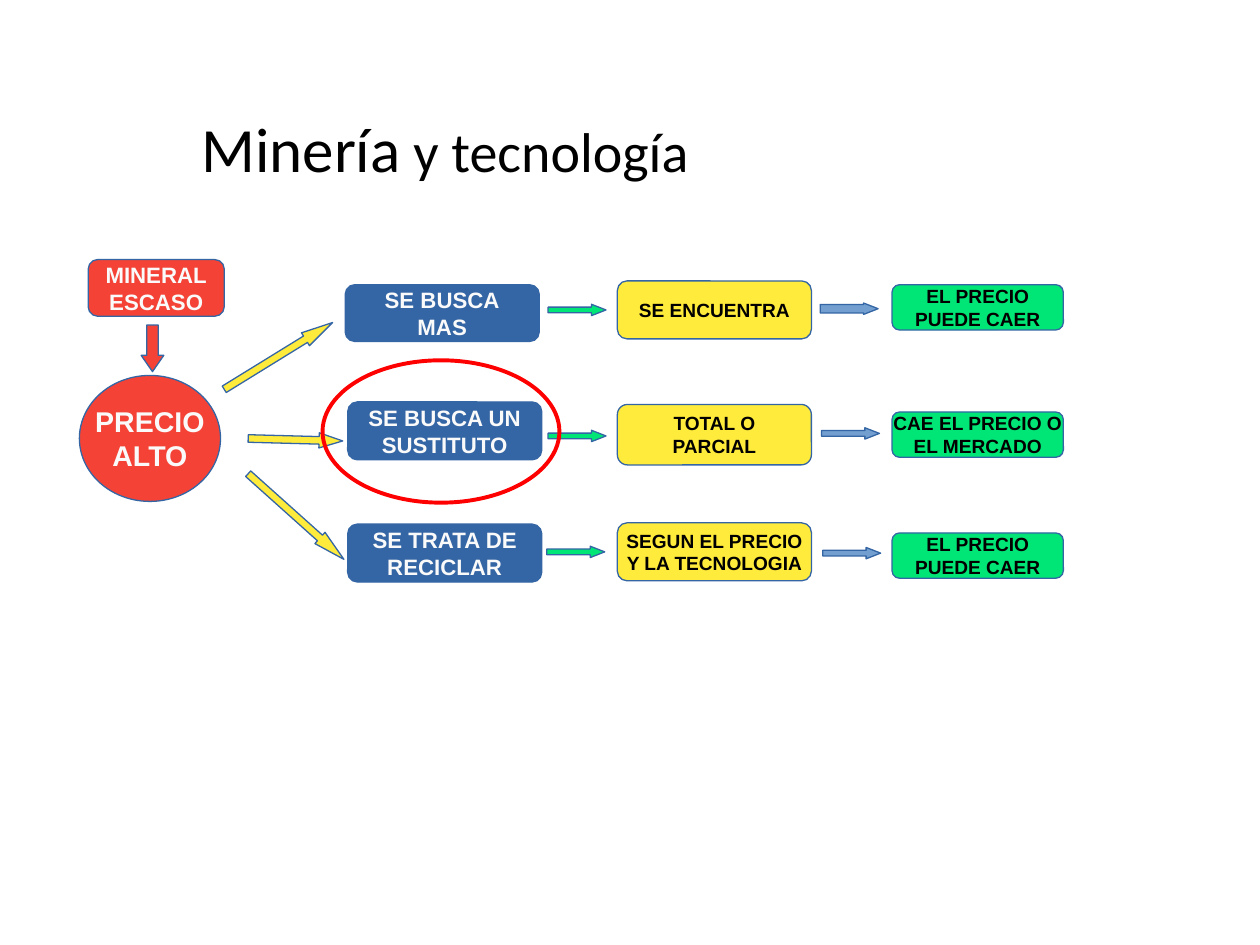
import math

from pptx import Presentation
from pptx import util as u
from pptx.dml.color import RGBColor
from pptx.enum import shapes, text

RED = RGBColor(0xF4, 0x43, 0x36)
BLUE = RGBColor(0x34, 0x65, 0xA4)
LIGHT_BLUE = RGBColor(0x72, 0x9F, 0xCF)
YELLOW = RGBColor(0xFF, 0xEB, 0x3B)
GREEN = RGBColor(0x00, 0xE6, 0x76)
HIGHLIGHT = RGBColor(0xFF, 0x00, 0x00)
WHITE = RGBColor(0xFA, 0xFA, 0xFA)
BLACK = RGBColor(0x00, 0x00, 0x00)
ROUNDED = shapes.MSO_SHAPE.ROUNDED_RECTANGLE
OVAL = shapes.MSO_SHAPE.OVAL


class FlowSlide:
    """Holds the slide and the style of its flow diagram."""

    label_font, title_font = "Arial", "Calibri"
    outline, outline_width = BLUE, u.Pt(0)

    def __init__(self, prs):
        self.slide = prs.slides.add_slide(prs.slide_layouts[6])

    def _shape(self, kind, left, top, width, height, fill):
        shape = self.slide.shapes.add_shape(
            kind, *(u.Inches(n) for n in (left, top, width, height)))
        shape.shadow.inherit = False
        shape.fill.solid()
        shape.fill.fore_color.rgb = fill
        shape.line.color.rgb = self.outline
        shape.line.width = self.outline_width
        return shape

    def box(self, lines, left, top, width, height, fill, color, size, kind=ROUNDED):
        frame = self._shape(kind, left, top, width, height, fill).text_frame
        frame.word_wrap = False
        frame.vertical_anchor = text.MSO_ANCHOR.MIDDLE
        frame.margin_left = frame.margin_right = u.Inches(0.09)
        frame.margin_top = frame.margin_bottom = u.Inches(0.04)
        frame.text = "\n".join(lines)
        for line in frame.paragraphs:
            line.alignment = text.PP_ALIGN.CENTER
            line.font.name = self.label_font
            line.font.size = u.Pt(size)
            line.font.bold = True
            line.font.color.rgb = color

    def arrow(self, start, end, fill, thickness=0.09, shaft=0.5, head=0.25):
        """Block arrow; shaft is a share of its thickness, head of its length."""
        (x1, y1), (x2, y2) = start, end
        length = math.dist(start, end)
        arrow = self._shape(
            shapes.MSO_SHAPE.RIGHT_ARROW, (x1 + x2 - length) / 2,
            (y1 + y2 - thickness) / 2, length, thickness, fill)
        arrow.rotation = math.degrees(math.atan2(y2 - y1, x2 - x1))
        arrow.adjustments[0] = shaft
        arrow.adjustments[1] = head * length / thickness

    def ring(self, left, top, width, height):
        ring = self._shape(OVAL, left, top, width, height, HIGHLIGHT)
        ring.fill.background()
        ring.line.color.rgb = HIGHLIGHT
        ring.line.width = u.Pt(2.25)

    def title(self, parts, left, top, width, height):
        frame = self.slide.shapes.add_textbox(
            *(u.Inches(n) for n in (left, top, width, height))).text_frame
        frame.word_wrap = True
        frame.auto_size = text.MSO_AUTO_SIZE.SHAPE_TO_FIT_TEXT
        heading = frame.paragraphs[0]
        heading.font.name = self.title_font
        heading.font.color.rgb = BLACK
        for words, size in parts:
            run = heading.add_run()
            run.text = words
            run.font.size = u.Pt(size)


# Each stage: lines, left, top, height
RESPONSES = [
    (["SE BUSCA", "MAS"], 2.74, 2.26, 0.45),
    (["SE BUSCA UN", "SUSTITUTO"], 2.76, 3.19, 0.46),
    (["SE TRATA DE", "RECICLAR"], 2.76, 4.16, 0.46),
]
OUTCOMES = [
    (["SE ENCUENTRA"], 4.9, 2.23, 0.46),
    (["TOTAL O", "PARCIAL"], 4.9, 3.21, 0.48),
    (["SEGUN EL PRECIO", "Y LA TECNOLOGIA"], 4.9, 4.15, 0.46),
]
EFFECTS = [
    (["EL PRECIO", "PUEDE CAER"], 7.08, 2.26, 0.36),
    (["CAE EL PRECIO O", "EL MERCADO"], 7.08, 3.27, 0.36),
    (["EL PRECIO", "PUEDE CAER"], 7.08, 4.23, 0.36),
]
# Columns: stages, width, fill, text colour, text size
COLUMNS = [
    (RESPONSES, 1.54, BLUE, WHITE, 12.7),
    (OUTCOMES, 1.54, YELLOW, BLACK, 10.9),
    (EFFECTS, 1.36, GREEN, BLACK, 10.9),
]
# Arrows from the high price to each response: start, end
PRICE_ARROWS = [
    ((1.78, 3.09), (2.64, 2.56)),
    ((1.97, 3.48), (2.72, 3.5)),
    ((1.97, 3.76), (2.73, 4.44)),
]
# Arrows between columns: left, middle height, fill, shaft
STEP_LENGTH = 0.46
STEP_ARROWS = [
    (4.35, 2.46, GREEN, 0.5), (4.35, 3.46, GREEN, 0.5), (4.34, 4.38, GREEN, 0.5),
    (6.51, 2.45, LIGHT_BLUE, 0.75), (6.52, 3.44, LIGHT_BLUE, 0.5),
    (6.53, 4.39, LIGHT_BLUE, 0.5),
]


def main():
    prs = Presentation()
    prs.slide_width, prs.slide_height = u.Inches(10), u.Inches(7.5)
    flow = FlowSlide(prs)

    # Cause: scarce mineral, high price
    flow.box(["MINERAL", "ESCASO"], 0.7, 2.06, 1.08, 0.45, RED, WHITE, 12.7)
    flow.arrow((1.21, 2.58), (1.21, 2.95), RED, thickness=0.18, head=0.35)
    flow.box(["PRECIO", "ALTO"], 0.63, 2.98, 1.12, 1, RED, WHITE, 16.3, OVAL)

    # Responses, outcomes and effects
    for stages, width, fill, color, size in COLUMNS:
        for lines, left, top, height in stages:
            flow.box(lines, left, top, width, height, fill, color, size)

    # Arrows between the stages
    for start, end in PRICE_ARROWS:
        flow.arrow(start, end, YELLOW, thickness=0.12)
    for left, middle, fill, shaft in STEP_ARROWS:
        flow.arrow((left, middle), (left + STEP_LENGTH, middle), fill, shaft=shaft)

    # Title and highlighted response
    flow.title([("Minería", 36), (" y tecnología", 32)], 1.5, 0.82, 7.11, 0.71)
    flow.ring(2.56, 2.86, 1.88, 1.13)

    prs.save("out.pptx")


if __name__ == "__main__":
    main()
